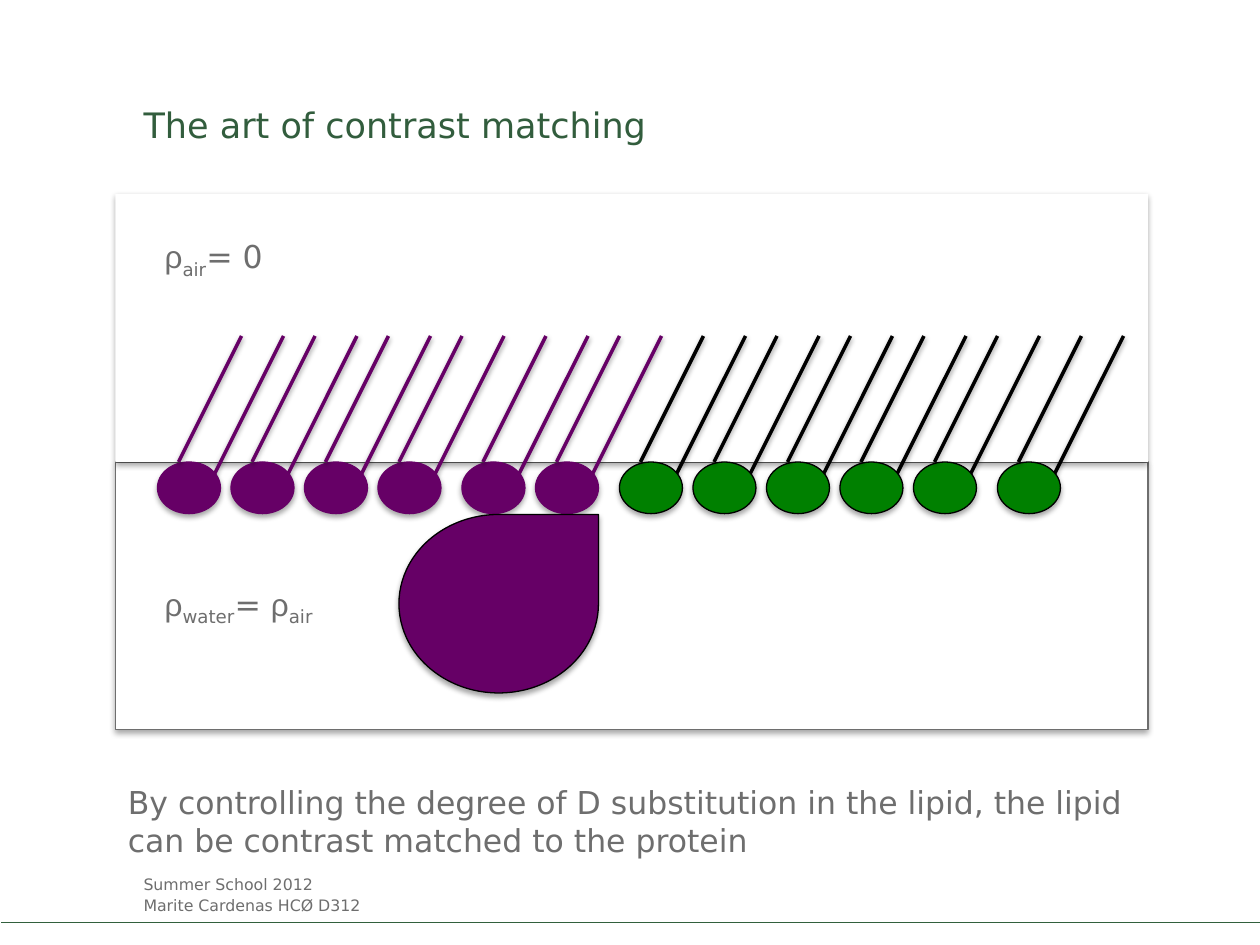
from lxml.etree import SubElement
from pptx import Presentation
from pptx.dml.color import RGBColor
from pptx.enum.shapes import MSO_CONNECTOR, MSO_SHAPE
from pptx.enum.text import MSO_ANCHOR
from pptx.oxml.ns import qn
from pptx.util import Pt

COLORS = {
    "title": "325D3D",
    "rule": "32603D",
    "text": "6E6E6E",
    "matched": "660066",
    "plain": "008000",
    "black": "000000",
    "white": "FFFFFF",
}
FONT = "DejaVu Sans"
SYMBOL_FONT = "Arial"


def color(name):
    return RGBColor.from_string(COLORS[name])


def set_all(target, values):
    for name, value in values.items():
        setattr(target, name, value)


class SlideBuilder:
    def __init__(self, page):
        self.page = page
        self.shapes = page.shapes

    def add_effects(self, shape, distance=None, opacity=35):
        """Replace the theme shadow by a soft one below, or by none."""
        effects = SubElement(shape._element.spPr, qn("a:effectLst"))
        if distance is None:
            return
        shadow = SubElement(
            effects, qn("a:outerShdw"), blurRad=str(Pt(3.1)),
            dist=str(Pt(distance)), dir="5400000", rotWithShape="0")
        tint = SubElement(shadow, qn("a:srgbClr"), val=COLORS["black"])
        SubElement(tint, qn("a:alpha"), val=str(opacity * 1000))

    def shape(self, kind, left, top, width, height, fill, line=None, parent=None):
        shapes = parent.shapes if parent else self.shapes
        shape = shapes.add_shape(kind, Pt(left), Pt(top), Pt(width), Pt(height))
        shape.fill.solid()
        shape.fill.fore_color.rgb = color(fill)
        if line:
            shape.line.color.rgb = color(line)
            shape.line.width = Pt(0.75)
        else:
            shape.line.fill.background()
        self.add_effects(shape, distance=1.8)

    def line(self, start, end, stroke, width, parent=None, shadow=None):
        shapes = parent.shapes if parent else self.shapes
        connector = shapes.add_connector(
            MSO_CONNECTOR.STRAIGHT, *(Pt(value) for value in (*start, *end)))
        connector.line.color.rgb = color(stroke)
        connector.line.width = Pt(width)
        self.add_effects(connector, shadow, opacity=38)

    def text(self, left, top, width, height, paragraphs, size, fill="text",
             frame_format=None, paragraph_formats=()):
        """Each paragraph is a list of (text, font, is_subscript) spans."""
        box = self.shapes.add_textbox(Pt(left), Pt(top), Pt(width), Pt(height))
        frame = box.text_frame
        set_all(frame, {"word_wrap": True, **(frame_format or {})})
        for index, spans in enumerate(paragraphs):
            para = frame.add_paragraph() if index else frame.paragraphs[0]
            if index < len(paragraph_formats):
                set_all(para, paragraph_formats[index])
            for content, font, is_subscript in spans:
                span = para.add_run()
                span.text = content
                set_all(span.font, {"name": font, "size": Pt(size)})
                span.font.color.rgb = color(fill)
                if is_subscript:
                    span._r.get_or_add_rPr().set("baseline", "-25000")

    def lipid(self, left, head_fill, stroke):
        """Draw a head at the interface with two slanted tails in the air."""
        group = self.shapes.add_group_shape()
        self.line((left + 72, 192), (left + 30, 276), stroke, 2, group, 1.6)
        self.shape(MSO_SHAPE.OVAL, left, 264, 36, 29.5, head_fill, stroke, group)
        self.line((left + 48, 192), (left + 12, 264), stroke, 2, group, 1.6)


def plain(content):
    return [(content, FONT, False)]


def density(medium):
    return [("ρ", SYMBOL_FONT, False), (medium, FONT, True)]


def main():
    deck = Presentation()
    set_all(deck, {"slide_width": Pt(720), "slide_height": Pt(540)})
    builder = SlideBuilder(deck.slides.add_slide(deck.slide_layouts[6]))
    no_margins = dict.fromkeys(
        ("margin_left", "margin_top", "margin_right", "margin_bottom"), 0)

    builder.text(82, 499.7, 566, 22.3,
                 [plain("Summer School 2012"), plain("Marite Cardenas HCØ D312")],
                 9, frame_format=no_margins,
                 paragraph_formats=[{}, {"line_spacing": 1.1}])
    builder.line((720.5, 527), (0.5, 527), "rule", 0.75)

    builder.shape(MSO_SHAPE.RECTANGLE, 66, 264, 590, 153, "white", "text")
    builder.shape(MSO_SHAPE.RECTANGLE, 66, 111, 590, 153, "white")
    builder.text(82, 37.5, 464, 45.5, [plain("The art of contrast matching")],
                 20, "title",
                 {**no_margins, "vertical_anchor": MSO_ANCHOR.BOTTOM})

    left = 90
    clusters = [(4, "matched", "matched"), (2, "matched", "matched"),
                (5, "plain", "black"), (1, "plain", "black")]
    for count, head_fill, stroke in clusters:
        for _ in range(count):
            builder.lipid(left, head_fill, stroke)
            left += 42
        left += 6

    air_label = density("air") + plain("= 0")
    water_label = density("water") + plain("= ") + density("air")
    builder.text(87, 132, 141, 269, [air_label, water_label], 18,
                 paragraph_formats=[{}, {"space_before": Pt(174)}])
    builder.shape(MSO_SHAPE.TEAR, 228, 294, 114, 102, "matched", "black")
    builder.text(66, 444, 590, 51,
                 [plain("By controlling the degree of D substitution in the lipid, "
                        "the lipid can be contrast matched to the protein")], 18)
    deck.save("out.pptx")


if __name__ == "__main__":
    main()
